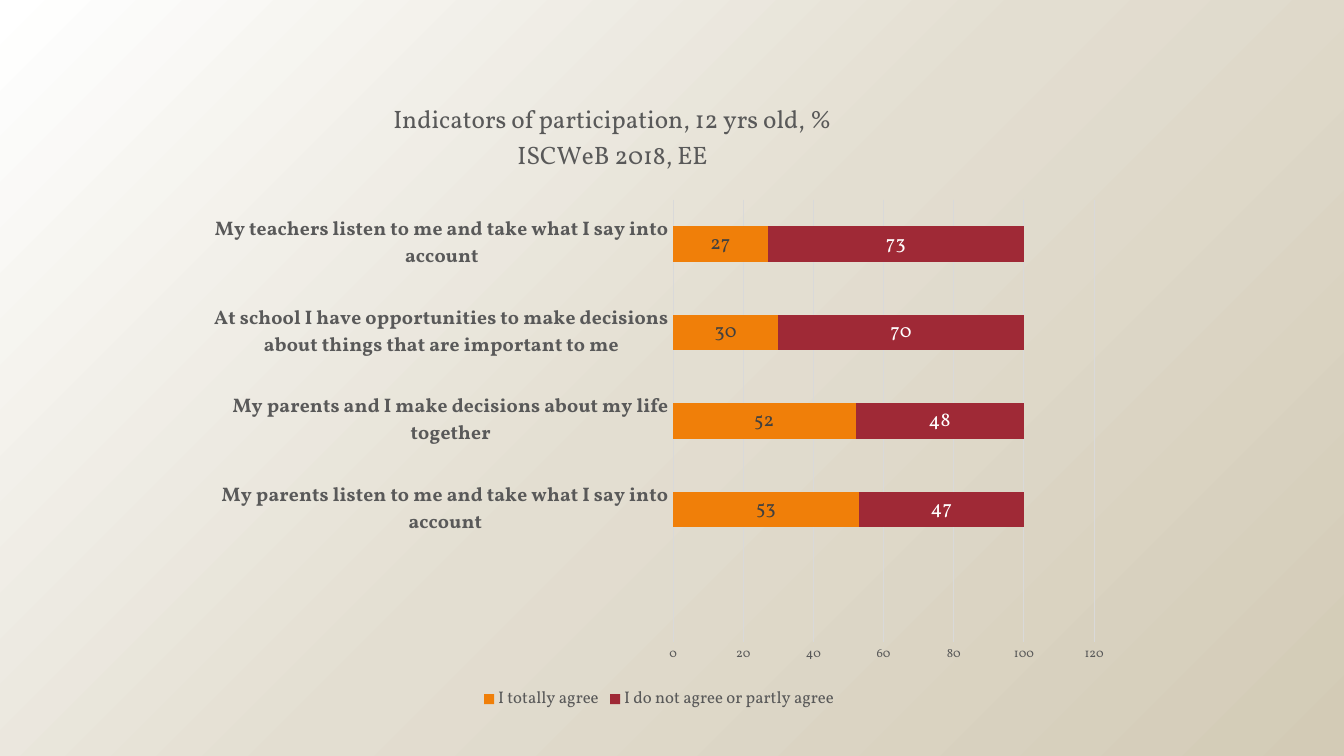
import pptx
import pptx.chart.data
import pptx.dml.color
import pptx.enum.chart
import pptx.enum.shapes
import pptx.oxml
import pptx.oxml.ns
import pptx.util

Pt = pptx.util.Pt
RGBColor = pptx.dml.color.RGBColor
chart_enums = pptx.enum.chart

FONT = "Vollkorn"
ORANGE = RGBColor(0xF0, 0x7F, 0x09)
DARK_RED = RGBColor(0x9F, 0x29, 0x36)
WHITE = RGBColor(0xFF, 0xFF, 0xFF)
BLACK = RGBColor(0, 0, 0)
GREY = RGBColor(0x59, 0x59, 0x59)
DARK_GREY = RGBColor(0x40, 0x40, 0x40)
LIGHT_GREY = RGBColor(0xD9, 0xD9, 0xD9)
SAND = RGBColor(0xD3, 0xCB, 0xB6)
PALE_SAND = RGBColor(0xE3, 0xDE, 0xD1)

STATEMENTS = [
    "",
    "My parents listen to me and take what I say into account",
    "My parents and I make decisions about my life together",
    "At school I have opportunities to make decisions about things that are important to me",
    "My teachers listen to me and take what I say into account",
]
ANSWERS = [
    ("I totally agree", [None, 53, 52, 30, 27], ORANGE, DARK_GREY),
    ("I do not agree or partly agree", [None, 47, 48, 70, 73], DARK_RED, WHITE),
]
TITLE_LINES = ["Indicators of participation, 12 yrs old, %", "ISCWeB 2018, EE"]
NUMBER_FORMAT = "###0"


def format_font(font, size, color=GREY, bold=False):
    font.name = FONT
    font.size = Pt(size)
    font.bold = bold
    font.color.rgb = color


def write_line(paragraph, text, **font_format):
    run = paragraph.add_run()
    run.text = text
    format_font(run.font, **font_format)


def place_manually(parent, index, **fractions):
    """Give a chart part a manual layout, in fractions of the chart's box."""
    for layout in parent.findall(pptx.oxml.ns.qn("c:layout")):
        parent.remove(layout)
    target = '<c:layoutTarget val="inner"/>' if "w" in fractions else ""
    modes = "".join(f'<c:{key}Mode val="edge"/>' for key in "xy")
    values = "".join(f'<c:{key} val="{value}"/>' for key, value in fractions.items())
    parent.insert(index, pptx.oxml.parse_xml(
        f'<c:layout {pptx.oxml.ns.nsdecls("c")}><c:manualLayout>'
        f"{target}{modes}{values}</c:manualLayout></c:layout>"))


def add_backdrop(slide, left, top, width, height):
    backdrop = slide.shapes.add_shape(
        pptx.enum.shapes.MSO_SHAPE.RECTANGLE, left, top, width, height)
    backdrop.shadow.inherit = False
    backdrop.line.fill.background()
    backdrop.fill.gradient()
    gradient = backdrop.fill._xPr.find(pptx.oxml.ns.qn("a:gradFill"))
    stops = "".join(
        f'<a:gs pos="{position * 1000}"><a:srgbClr val="{color}"/></a:gs>'
        for position, color in ((0, SAND), (50, PALE_SAND), (100, WHITE)))
    gradient.getparent().replace(gradient, pptx.oxml.parse_xml(
        f'<a:gradFill {pptx.oxml.ns.nsdecls("a")} rotWithShape="1"><a:gsLst>{stops}</a:gsLst>'
        '<a:path path="circle"><a:fillToRect l="100000" t="100000"/></a:path></a:gradFill>'))


def format_axes(chart):
    statements = chart.category_axis
    statements.major_tick_mark = chart_enums.XL_TICK_MARK.NONE
    statements.format.line.color.rgb = LIGHT_GREY
    statements.format.line.width = Pt(0.75)
    format_font(statements.tick_labels.font, 14, bold=True)

    percent = chart.value_axis
    percent.minimum_scale, percent.maximum_scale, percent.major_unit = 0, 120, 20
    percent.major_tick_mark = chart_enums.XL_TICK_MARK.NONE
    percent.format.line.fill.background()
    percent.has_major_gridlines = True
    percent.major_gridlines.format.line.color.rgb = LIGHT_GREY
    percent.major_gridlines.format.line.width = Pt(0.75)
    percent.tick_labels.number_format = NUMBER_FORMAT
    percent.tick_labels.number_format_is_linked = False
    format_font(percent.tick_labels.font, 9)


def format_bars(chart):
    plot = chart.plots[0]
    plot.gap_width = 150
    plot.overlap = 100
    plot.vary_by_categories = False
    for series, (_, _, bar_color, label_color) in zip(plot.series, ANSWERS):
        series.format.fill.solid()
        series.format.fill.fore_color.rgb = bar_color
        labels = series.data_labels
        labels.show_value = True
        labels.number_format = NUMBER_FORMAT
        labels.number_format_is_linked = False
        labels.position = chart_enums.XL_LABEL_POSITION.CENTER
        format_font(labels.font, 14, label_color)


def add_participation_chart(slide, left, top, width, height):
    data = pptx.chart.data.CategoryChartData(number_format=NUMBER_FORMAT)
    data.categories = STATEMENTS
    for name, values, _, _ in ANSWERS:
        data.add_series(name, values)
    chart = slide.shapes.add_chart(
        chart_enums.XL_CHART_TYPE.BAR_STACKED, left, top, width, height, data).chart
    format_font(chart.font, 10, BLACK)

    title = chart.chart_title.text_frame
    for number, line in enumerate(TITLE_LINES):
        paragraph = title.add_paragraph() if number else title.paragraphs[0]
        write_line(paragraph, line, size=18)
    place_manually(chart.chart_title._element, 1, x=0.21, y=0.02)

    format_axes(chart)
    format_bars(chart)
    plot_area = chart._chartSpace.chart.plotArea
    place_manually(plot_area, 0, x=0.515, y=0.18, w=0.454, h=0.705)

    chart.has_legend = True
    chart.legend.position = chart_enums.XL_LEGEND_POSITION.BOTTOM
    chart.legend.include_in_layout = False
    format_font(chart.legend.font, 12)


def main():
    deck = pptx.Presentation()
    deck.slide_width, deck.slide_height = Pt(960), Pt(540)
    slide = deck.slides.add_slide(deck.slide_layouts[6])
    add_backdrop(slide, 0, 0, deck.slide_width, deck.slide_height)
    add_participation_chart(slide, Pt(139.7), Pt(61.9), Pt(662.4), Pt(448.6))
    deck.save("out.pptx")


if __name__ == "__main__":
    main()
